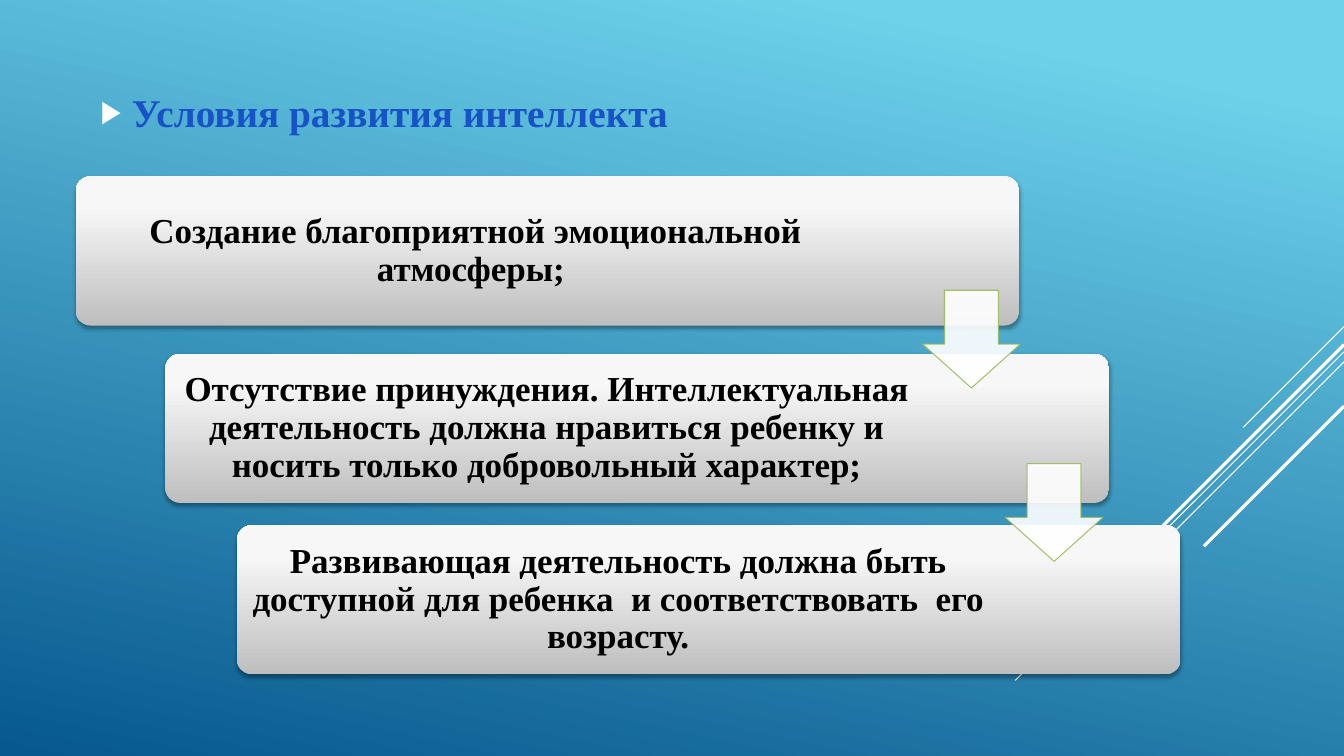
from dataclasses import dataclass
from lxml import etree
from pptx import Presentation
from pptx.dml.color import RGBColor as RGB
from pptx.enum.shapes import MSO_CONNECTOR as LINK, MSO_SHAPE as FORM
from pptx.enum.text import MSO_ANCHOR as ANCHOR, MSO_AUTO_SIZE as FIT, PP_ALIGN as ALIGN
from pptx.oxml import parse_xml
from pptx.oxml.ns import nsdecls, qn
from pptx.util import Inches, Pt


@dataclass(frozen=True)
class Theme:
    sky: str = "6ED2EB"
    deep: str = "06588E"
    white: str = "FFFFFF"
    black: str = "000000"
    title: str = "1752C7"
    edge: str = "17375E"
    dark: str = "BEBEBE"
    light: str = "F7F7F7"
    green: str = "9BBB59"
    font: str = "Times New Roman"
    head: int = 28
    body: int = 25


theme = Theme()


def write(shape, text, size=theme.body, color=theme.black, space=0.9):
    frame = shape.text_frame
    frame.word_wrap = True
    frame.auto_size = FIT.NONE
    frame.vertical_anchor = ANCHOR.MIDDLE
    frame.margin_left = frame.margin_right = Inches(0.1)
    para = frame.paragraphs[0]
    para.alignment = ALIGN.CENTER
    para.line_spacing = space
    run = para.add_run()
    run.text = text
    run.font.name = theme.font
    run.font.size = Pt(size)
    run.font.bold = True
    run.font.color.rgb = RGB.from_string(color)
    return para


def blend(fill, angle, *stops):
    """Fill with a gradient of two (position, colour) stops."""
    fill.gradient()
    fill.gradient_angle = angle
    for stop, (place, color) in zip(fill.gradient_stops, stops):
        stop.position = place
        stop.color.rgb = RGB.from_string(color)


deck = Presentation()
deck.slide_width, deck.slide_height = Inches(13.33), Inches(7.5)
slide = deck.slides.add_slide(deck.slide_layouts[5])
shapes = slide.shapes
blend(slide.background.fill, 258, (0.1, theme.sky), (1, theme.deep))

# Diagonal rays run at 45 degrees from the right edge: top, length, width
rays = [(3.24, 1, 0.75), (3.49, 3.26, 0.75), (3.59, 2.07, 0.75),
        (3.42, 1.91, 2.25), (4.03, 1.39, 2.25)]
for top, size, width in rays:
    ray = shapes.add_connector(LINK.STRAIGHT, Inches(13.33), Inches(top),
                               Inches(13.33 - size), Inches(top + size))
    ray.line.color.rgb = RGB.from_string(theme.white)
    ray.line.width = Pt(width)
    etree.SubElement(ray._element.spPr, qn("a:effectLst"))

# Heading with its bullet and thin letter outline
title = shapes.title
title.left, title.top = Inches(0), Inches(0.75)
title.width, title.height = Inches(7.62), Inches(0.72)
para = write(title, "Условия развития интеллекта", size=theme.head,
             color=theme.title, space=1.0)
props = para._p.get_or_add_pPr()
props.set("marL", str(Inches(0.31)))
props.set("indent", str(-Inches(0.31)))
for mark in (f'<a:buClr {nsdecls("a")}><a:srgbClr val="{theme.white}"/></a:buClr>',
             f'<a:buSzPct {nsdecls("a")} val="80000"/>',
             f'<a:buFont {nsdecls("a")} typeface="Arial"/>',
             f'<a:buChar {nsdecls("a")} char="▶"/>'):
    props.append(parse_xml(mark))
para.runs[0].font._element.insert(0, parse_xml(
    f'<a:ln {nsdecls("a")} w="{Pt(0.83)}"><a:solidFill>'
    f'<a:srgbClr val="{theme.edge}"/></a:solidFill></a:ln>'))

# Steps: left, top, text width, text
steps = [
    (0.75, 1.75, 7.76, " Создание благоприятной эмоциональной атмосферы;"),
    (1.64, 3.51, 7.48, "Отсутствие принуждения. Интеллектуальная деятельность "
                       "должна нравиться ребенку и носить только добровольный характер;"),
    (2.35, 5.21, 7.48, "Развивающая деятельность должна быть доступной для ребенка  "
                       "и соответствовать  его возрасту."),
]
for left, top, width, text in steps:
    card = shapes.add_shape(FORM.ROUNDED_RECTANGLE, Inches(left), Inches(top),
                            Inches(9.36), Inches(1.48))
    card.adjustments[0] = 0.1
    blend(card.fill, 90, (0, theme.dark), (0.8, theme.light))
    card.line.fill.background()
    card.shadow.inherit = False
    card._element.spPr.find(qn("a:effectLst")).append(parse_xml(
        f'<a:outerShdw {nsdecls("a")} blurRad="{Pt(3.1)}" dist="{Pt(1.8)}" '
        f'dir="5400000" rotWithShape="0"><a:srgbClr val="{theme.black}">'
        '<a:alpha val="35000"/></a:srgbClr></a:outerShdw>'))
    label = shapes.add_textbox(Inches(left + 0.04), Inches(top + 0.04),
                               Inches(width), Inches(1.4))
    write(label, text)

for left, top in [(9.15, 2.88), (9.97, 4.6)]:
    arrow = shapes.add_shape(FORM.DOWN_ARROW, Inches(left), Inches(top),
                             Inches(0.97), Inches(0.97))
    arrow.adjustments[0], arrow.adjustments[1] = 0.55, 0.45
    arrow.fill.solid()
    arrow.fill.fore_color.rgb = RGB.from_string(theme.white)
    arrow.line.color.rgb = RGB.from_string(theme.green)
    arrow.line.width = Pt(0.75)
    arrow.shadow.inherit = False
    for color in arrow._element.spPr.iter(qn("a:srgbClr")):
        etree.SubElement(color, qn("a:alpha")).set("val", "90000")

deck.save("out.pptx")
